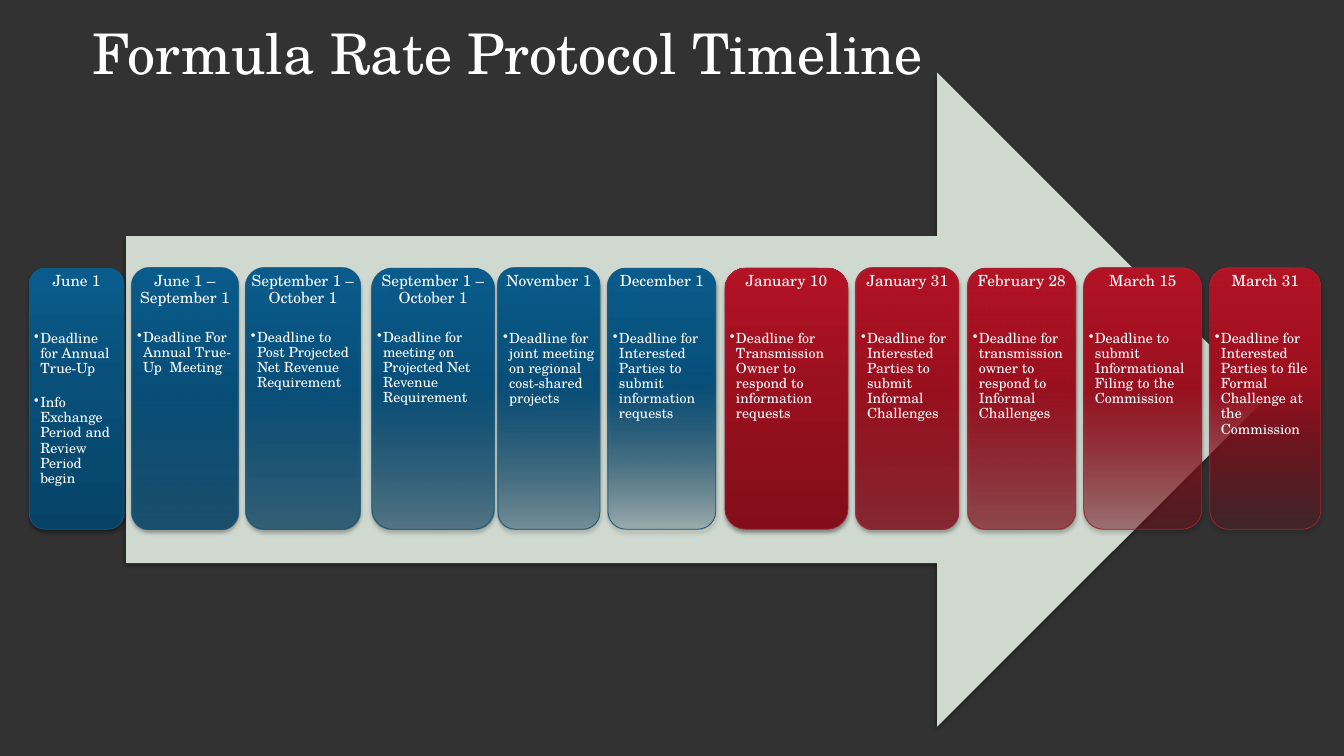
from lxml.etree import SubElement
from pptx import Presentation
from pptx.dml.color import RGBColor
from pptx.enum.shapes import MSO_SHAPE
from pptx.enum.text import MSO_ANCHOR, MSO_AUTO_SIZE, PP_ALIGN
from pptx.oxml import parse_xml
from pptx.oxml.ns import nsdecls, qn
from pptx.util import Inches, Pt

# Content: left edge, width, date, deadlines
TITLE = "Formula Rate Protocol Timeline"
BLUE_STEPS = [
    (0.29, 0.94, "June 1", ["Deadline for Annual True-Up",
                            "Info Exchange Period and Review Period begin"]),
    (1.31, 1.05, "June 1 – September 1", ["Deadline For Annual True-Up  Meeting"]),
    (2.44, 1.13, "September 1 – October 1",
     ["Deadline to Post Projected Net Revenue Requirement"]),
    (3.69, 1.21, "September 1 – October 1",
     ["Deadline for meeting on Projected Net Revenue Requirement"]),
    (4.94, 1.01, "November 1",
     ["Deadline for joint meeting on regional cost-shared projects"]),
    (6.03, 1.07, "December 1",
     ["Deadline for Interested Parties to submit information requests"]),
]
RED_STEPS = [
    (7.19, 1.22, "January 10",
     ["Deadline for Transmission Owner to respond to information requests"]),
    (8.49, 1.02, "January 31",
     ["Deadline for Interested Parties to submit Informal Challenges"]),
    (9.6, 1.07, "February 28",
     ["Deadline for transmission owner to respond to Informal Challenges"]),
    (10.75, 1.17, "March 15",
     ["Deadline to submit Informational Filing to the Commission"]),
    (12, 1.1, "March 31",
     ["Deadline for Interested Parties to file Formal Challenge at the Commission"]),
]

# Look
FONT = "TeX Gyre Schola"
COLORS = {"background": "323232", "arrow": "D0D9CF", "text": "FFFFFF",
          "shadow": "000000", "blue line": "18577C", "red line": "9E2533"}
GRADIENTS = {"blue": ("074367", "084F79", "095C8D"),
             "red": ("830E1B", "9A101F", "B31325")}
CARD_TOP, CARD_HEIGHT = 2.66, 2.59
TEXT_INSET = 0.05
CORNER_INSET = 0.049  # share of the width a rounded corner takes from the text


def color(name):
    return RGBColor.from_string(COLORS[name])


def add_text(frame, text, size=10, align=PP_ALIGN.LEFT, before=0, bullet=False):
    """Fill the first paragraph of the frame, or add one after it."""
    first = frame.paragraphs[0]
    paragraph = frame.add_paragraph() if first.runs else first
    properties = paragraph._p.get_or_add_pPr()
    if bullet:
        properties.set("marL", str(Inches(0.06)))
        properties.set("indent", str(-Inches(0.06)))
        SubElement(properties, qn("a:buChar")).set("char", "•")
    paragraph.alignment = align
    paragraph.line_spacing = 0.9
    paragraph.space_before = Pt(before)
    paragraph.space_after = Pt(0)
    run = paragraph.add_run()
    run.text = text
    run.font.name = FONT
    run.font.size = Pt(size)
    run.font.color.rgb = color("text")


def add_shadow(shape):
    shape.shadow.inherit = False
    effects = shape._element.spPr.find(qn("a:effectLst"))
    effects.append(parse_xml(
        f'<a:outerShdw {nsdecls("a")} blurRad="{Pt(3.1)}" dist="{Pt(2)}" '
        f'dir="5400000" algn="ctr" rotWithShape="0"><a:srgbClr val="{COLORS["shadow"]}">'
        f'<a:alpha val="38000"/></a:srgbClr></a:outerShdw>'))


def fill_gradient(shape, hues, base_opacity):
    """Run upwards from a partly clear base to a solid top."""
    shape.fill.gradient()
    shape.fill.gradient_angle = 90
    stops = shape._element.spPr.find(qn("a:gradFill")).find(qn("a:gsLst"))
    for stop in list(stops):
        stops.remove(stop)
    for position, hue, opacity in zip((0, 55, 100), hues, (base_opacity, 100, 100)):
        stops.append(parse_xml(
            f'<a:gs {nsdecls("a")} pos="{position * 1000}"><a:srgbClr val="{hue}">'
            f'<a:alpha val="{opacity * 1000}"/></a:srgbClr></a:gs>'))


def add_card(slide, step, family, base_opacity):
    left, width, date, deadlines = step
    card = slide.shapes.add_shape(
        MSO_SHAPE.ROUNDED_RECTANGLE, Inches(left), Inches(CARD_TOP),
        Inches(width), Inches(CARD_HEIGHT))
    fill_gradient(card, GRADIENTS[family], base_opacity)
    card.line.color.rgb = color(f"{family} line")
    card.line.width = Pt(0.5)
    add_shadow(card)

    frame = card.text_frame
    frame.word_wrap = True
    frame.vertical_anchor = MSO_ANCHOR.TOP
    inset = Inches(TEXT_INSET - CORNER_INSET * width)
    frame.margin_left = frame.margin_right = inset
    frame.margin_top = frame.margin_bottom = inset
    add_text(frame, date, size=11, align=PP_ALIGN.CENTER)
    gap = 17 if "–" in date else 29.5  # a date range takes two lines
    for deadline in deadlines:
        add_text(frame, deadline, before=gap, bullet=True)
        gap = 13.5


def main():
    deck = Presentation()
    deck.slide_width, deck.slide_height = Inches(13.33), Inches(7.5)
    slide = deck.slides.add_slide(deck.slide_layouts[5])
    slide.background.fill.solid()
    slide.background.fill.fore_color.rgb = color("background")

    # Title
    title = slide.shapes.title
    title.left, title.top = Inches(0.82), Inches(0.21)
    title.width, title.height = Inches(12.3), Inches(1.45)
    title.text_frame.vertical_anchor = MSO_ANCHOR.TOP
    title.text_frame.auto_size = MSO_AUTO_SIZE.NONE
    add_text(title.text_frame, TITLE, size=40)

    # Timeline arrow
    arrow = slide.shapes.add_shape(MSO_SHAPE.RIGHT_ARROW, Inches(1.25), Inches(0.72),
                                   Inches(11.29), Inches(6.49))
    arrow.fill.solid()
    arrow.fill.fore_color.rgb = color("arrow")
    arrow.line.fill.background()
    add_shadow(arrow)

    # Cards, each family fading step by step
    for family, steps, last_opacity in (("blue", BLUE_STEPS, 19), ("red", RED_STEPS, 20)):
        fade = (100 - last_opacity) / (len(steps) - 1)
        for index, step in enumerate(steps):
            add_card(slide, step, family, round(100 - fade * index))

    deck.save("out.pptx")


if __name__ == "__main__":
    main()
